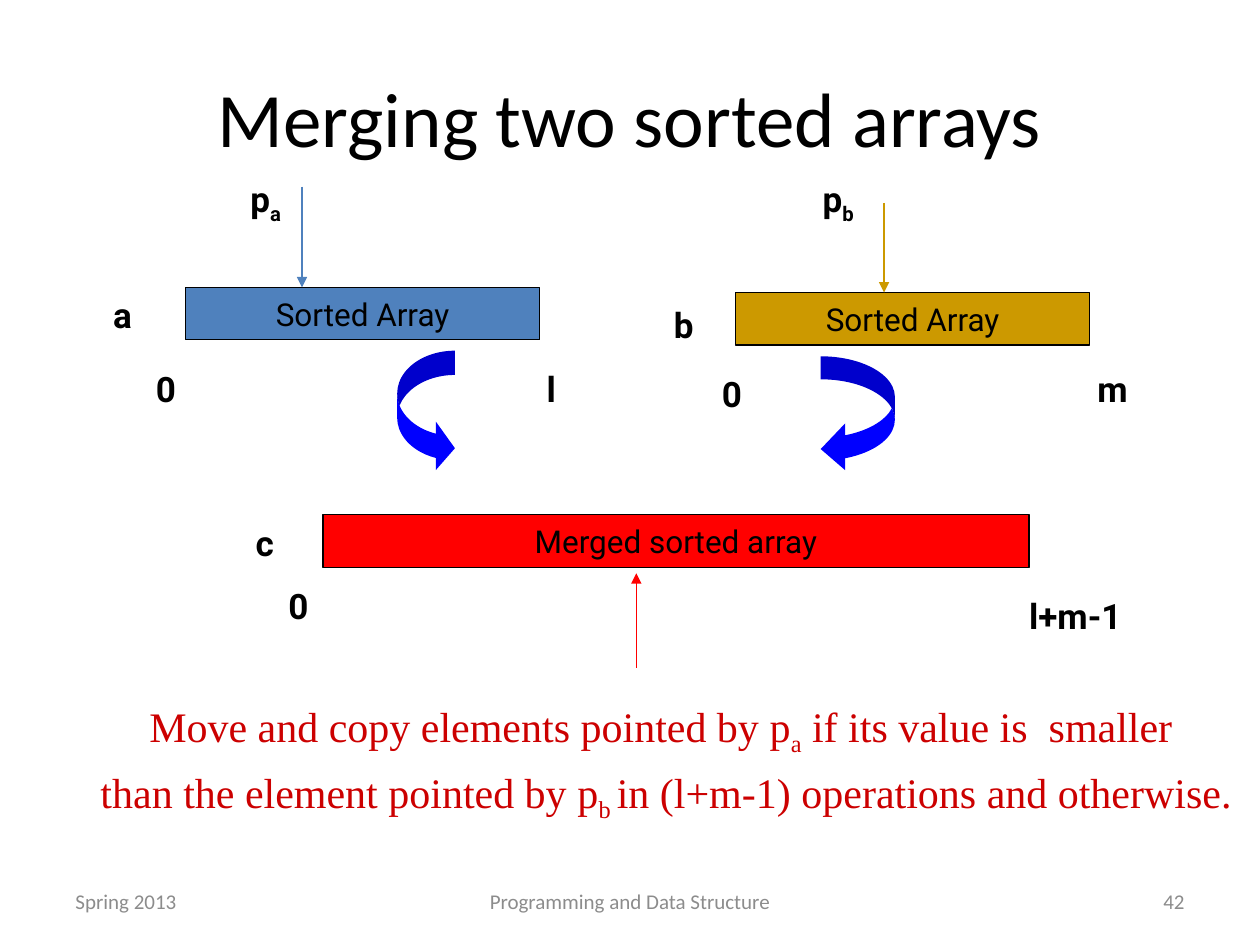
import pptx
import pptx.util
import pptx.dml.color
import pptx.enum.shapes
import pptx.enum.text
import pptx.oxml.ns
from lxml import etree

Pt = pptx.util.Pt
RGBColor = pptx.dml.color.RGBColor
SHAPE = pptx.enum.shapes.MSO_SHAPE
ALIGN = pptx.enum.text.PP_ALIGN
ANCHOR = pptx.enum.text.MSO_ANCHOR
FIT = pptx.enum.text.MSO_AUTO_SIZE

BLACK = RGBColor(0x00, 0x00, 0x00)
GREY = RGBColor(0x8C, 0x8C, 0x8C)
STEEL = RGBColor(0x4F, 0x81, 0xBD)
GOLD = RGBColor(0xCC, 0x99, 0x00)
RED = RGBColor(0xFF, 0x00, 0x00)
BLUE = RGBColor(0x00, 0x00, 0xFF)
CRIMSON = RGBColor(0xCC, 0x00, 0x00)


class Sketch:
    """Holds the style and the current slide; lengths are in points."""

    heading_font = "Calibri"
    label_font = "Roboto"
    note_font = "Times New Roman"
    line_width = 0.75

    def __init__(self, page):
        self.page = page

    def add_spans(self, para, spans, size, font, color, bold=False):
        """Add runs; each span is (text, is_subscript)."""
        for text, is_subscript in spans:
            span = para.add_run()
            span.text = text
            span.font.size = Pt(size)
            span.font.name = font
            span.font.color.rgb = color
            span.font.bold = bold
            if is_subscript:
                span._r.get_or_add_rPr().set("baseline", "-25000")

    def textbox(self, left, top, width, height, wrap):
        box = self.page.shapes.add_textbox(Pt(left), Pt(top), Pt(width), Pt(height))
        frame = box.text_frame
        frame.word_wrap = wrap
        frame.auto_size = FIT.NONE if wrap else FIT.SHAPE_TO_FIT_TEXT
        return frame

    def heading(self, left, top, width, height, text, size, color, align):
        frame = self.textbox(left, top, width, height, True)
        frame.vertical_anchor = ANCHOR.MIDDLE
        para = frame.paragraphs[0]
        para.alignment = align
        self.add_spans(para, [(text, False)], size, self.heading_font, color)

    def label(self, left, top, width, text, subscript=""):
        frame = self.textbox(left, top, width, 31, False)
        spans = [(text, False)] + ([(subscript, True)] if subscript else [])
        self.add_spans(frame.paragraphs[0], spans, 20, self.label_font, BLACK, True)

    def note(self, left, top, width, height, lines):
        frame = self.textbox(left, top, width, height, False)
        for index, spans in enumerate(lines):
            para = frame.add_paragraph() if index else frame.paragraphs[0]
            para.alignment = ALIGN.CENTER
            para.space_before = Pt(4.8)
            properties = para._p.get_or_add_pPr()
            properties.set("marL", str(Pt(58.5)))
            properties.set("indent", str(Pt(-22.5)))
            self.add_spans(para, spans, 24, self.note_font, CRIMSON)

    def shape(self, kind, left, top, width, height, fill):
        shape = self.page.shapes.add_shape(
            kind, Pt(left), Pt(top), Pt(width), Pt(height))
        shape.shadow.inherit = False
        shape.fill.solid()
        shape.fill.fore_color.rgb = fill
        return shape

    def array(self, left, top, width, text, fill):
        bar = self.shape(SHAPE.RECTANGLE, left, top, width, 30, fill)
        bar.line.color.rgb = BLACK
        bar.line.width = Pt(self.line_width)
        frame = bar.text_frame
        frame.word_wrap = False
        frame.vertical_anchor = ANCHOR.MIDDLE
        para = frame.paragraphs[0]
        para.alignment = ALIGN.CENTER
        self.add_spans(para, [(text, False)], 18, self.label_font, BLACK)

    def curved_arrow(self, kind, left, top, width, height, adjustments):
        arrow = self.shape(kind, left, top, width, height, BLUE)
        arrow.line.fill.background()
        for index, value in enumerate(adjustments):
            arrow.adjustments[index] = value

    def pointer(self, x, start, end, color):
        line = self.page.shapes.add_connector(
            pptx.enum.shapes.MSO_CONNECTOR.STRAIGHT, Pt(x), Pt(start), Pt(x), Pt(end))
        line.line.color.rgb = color
        line.line.width = Pt(self.line_width)
        qn = pptx.oxml.ns.qn
        properties = line._element.spPr
        etree.SubElement(properties.find(qn("a:ln")), qn("a:tailEnd"), type="triangle")
        etree.SubElement(properties, qn("a:effectLst"))


def main():
    deck = pptx.Presentation()
    deck.slide_width, deck.slide_height = Pt(720), Pt(540)
    sketch = Sketch(deck.slides.add_slide(deck.slide_layouts[6]))

    # Title and footer
    sketch.heading(36, 21.6, 648, 90, "Merging two sorted arrays", 44, BLACK, ALIGN.CENTER)
    for left, width, text, align in (
        (36, 168, "Spring 2013", ALIGN.LEFT),
        (246, 228, "Programming and Data Structure", ALIGN.CENTER),
        (516, 168, "42", ALIGN.RIGHT),
    ):
        sketch.heading(left, 500.4, width, 28.8, text, 12, GREY, align)

    # Arrays
    sketch.array(106, 164.2, 202.5, "Sorted Array", STEEL)
    sketch.array(420.3, 167.2, 202.5, "Sorted Array", GOLD)
    sketch.array(184.5, 294.2, 403.5, "Merged sorted array", RED)

    # Curved arrows from the sorted arrays to the merged one
    sketch.curved_arrow(SHAPE.CURVED_RIGHT_ARROW, 227, 200.4, 33, 69.6,
                        (0.42, 0.84, 0.33))
    sketch.curved_arrow(SHAPE.CURVED_LEFT_ARROW, 469, 203.6, 42.4, 66.4,
                        (0.31, 0.63, 0.33))

    # Array names, index bounds and pointer names
    for label in (
        (57.6, 164.2, 26.6, "a"),
        (82, 206.6, 27.4, "0"),
        (305.3, 206.6, 20.2, "l"),
        (136, 97.9, 34.6, "p", "a"),
        (378, 170, 27.4, "b"),
        (405.4, 209.5, 27.4, "0"),
        (620, 206.6, 33.8, "m"),
        (463, 97.9, 35.3, "p", "b"),
        (139, 294.5, 25.2, "c"),
        (157.7, 330.5, 27.4, "0"),
        (581, 336.2, 77, "l+m-1"),
    ):
        sketch.label(*label)

    # Pointers
    sketch.pointer(172.6, 106.6, 164.2, STEEL)
    sketch.pointer(505.2, 116, 167.2, GOLD)
    sketch.pointer(363.6, 381.6, 327.6, RED)

    # Explanation
    sketch.note(8, 396.7, 703.4, 70.6, (
        (("Move and copy elements pointed by p", False), ("a", True),
         (" if its value is  smaller", False)),
        ((" than the element pointed by p", False), ("b ", True),
         ("in (l+m-1) operations and otherwise.", False)),
    ))

    deck.save("out.pptx")


if __name__ == "__main__":
    main()
